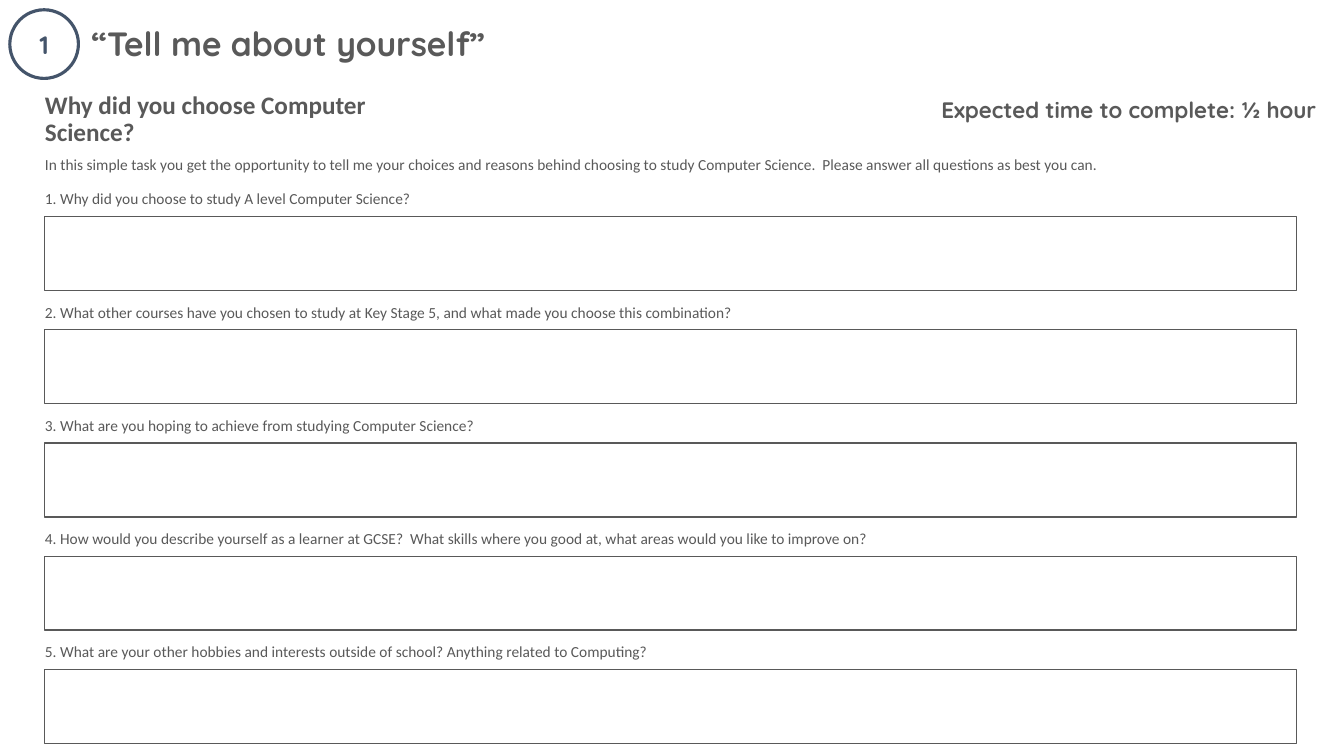
from pptx import Presentation
from pptx.dml.color import RGBColor
from pptx.enum import shapes, text
from pptx.util import Pt

GREY, NAVY = "595959", "44546A"
BODY_FONT, HEADING_FONT = "Calibri", "Quicksand"

TITLE = "“Tell me about yourself”"
TASK_NUMBER = "1"
SUBTITLE = "Why did you choose Computer Science?"
TIME_NEEDED = "Expected time to complete: ½ hour"
INTRO = ("In this simple task you get the opportunity to tell me your choices and reasons "
         "behind choosing to study Computer Science.  Please answer all questions as best you can.")
# Question and the width of its label
QUESTIONS = [
    ("1. Why did you choose to study A level Computer Science?", 480),
    ("2. What other courses have you chosen to study at Key Stage 5, "
     "and what made you choose this combination?", 555),
    ("3. What are you hoping to achieve from studying Computer Science?", 480),
    ("4. How would you describe yourself as a learner at GCSE?  What skills where you good at, "
     "what areas would you like to improve on?", 759),
    ("5. What are your other hobbies and interests outside of school? "
     "Anything related to Computing?", 759),
]

TEXT_LEFT = 25
LABEL_HEIGHT = 20.6
FIRST_LABEL_TOP, QUESTION_PITCH = 131.8, 80.9
ANSWER_LEFT, ANSWER_WIDTH, ANSWER_HEIGHT = 31.7, 894.3, 52.8
ANSWER_OFFSET = 22.8


def color(hex_string):
    return RGBColor.from_string(hex_string)


def box(left, top, width, height):
    return Pt(left), Pt(top), Pt(width), Pt(height)


def write(shape, content, size=11, font=BODY_FONT, ink=GREY, bold=False, wrap=True,
          align=text.PP_ALIGN.LEFT, anchor=text.MSO_ANCHOR.TOP, line_spacing=None):
    frame = shape.text_frame
    frame.auto_size = text.MSO_AUTO_SIZE.NONE
    frame.word_wrap = wrap
    frame.vertical_anchor = anchor
    paragraph = frame.paragraphs[0]
    paragraph.alignment = align
    paragraph.line_spacing = line_spacing
    run = paragraph.add_run()
    run.text = content
    run.font.size = Pt(size)
    run.font.name = font
    run.font.bold = bold
    run.font.color.rgb = color(ink)


def add_outline(parent, kind, bounds, ink, weight):
    shape = parent.add_shape(kind, *box(*bounds))
    shape.shadow.inherit = False
    shape.fill.background()
    shape.line.color.rgb = color(ink)
    shape.line.width = Pt(weight)
    return shape


def main():
    presentation = Presentation()
    presentation.slide_width, presentation.slide_height = Pt(960), Pt(540)
    slide = presentation.slides.add_slide(presentation.slide_layouts[5])

    title = slide.shapes.title
    title.left, title.top, title.width, title.height = box(58.3, 6.5, 742.3, 52.6)
    write(title, TITLE, size=24, font=HEADING_FONT, bold=True,
          anchor=text.MSO_ANCHOR.MIDDLE, line_spacing=0.9)

    badge = add_outline(slide.shapes, shapes.MSO_SHAPE.OVAL, (7, 7, 49, 49), NAVY, 2.25)
    write(badge, TASK_NUMBER, size=18, font=HEADING_FONT, ink=NAVY, bold=True,
          align=text.PP_ALIGN.CENTER, anchor=text.MSO_ANCHOR.MIDDLE)

    time_needed = slide.shapes.add_textbox(*box(665.3, 67, 294.5, 28.8))
    write(time_needed, TIME_NEEDED, size=16, font=HEADING_FONT, bold=True, line_spacing=0.9)

    subtitle = slide.shapes.add_textbox(*box(TEXT_LEFT, 71.3, 300, 28.8))
    write(subtitle, SUBTITLE, size=18, bold=True,
          anchor=text.MSO_ANCHOR.MIDDLE, line_spacing=0.9)

    intro = slide.shapes.add_textbox(*box(TEXT_LEFT, 107.3, 770.4, LABEL_HEIGHT))
    write(intro, INTRO, wrap=False)

    for index, (question, label_width) in enumerate(QUESTIONS):
        top = FIRST_LABEL_TOP + index * QUESTION_PITCH
        group = slide.shapes.add_group_shape()
        add_outline(group.shapes, shapes.MSO_SHAPE.RECTANGLE,
                    (ANSWER_LEFT, top + ANSWER_OFFSET, ANSWER_WIDTH, ANSWER_HEIGHT), GREY, 1)
        label = group.shapes.add_textbox(*box(TEXT_LEFT, top, label_width, LABEL_HEIGHT))
        write(label, question)

    presentation.save("out.pptx")


if __name__ == "__main__":
    main()
